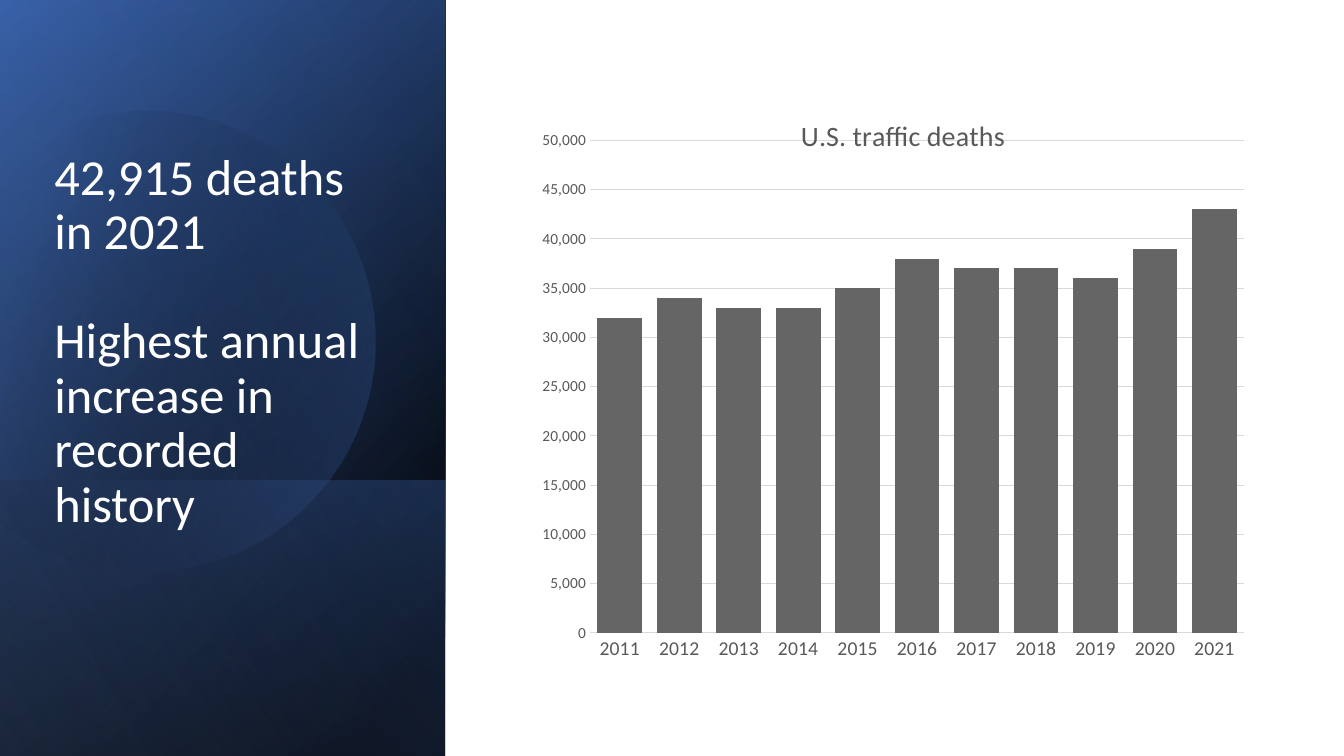
"""Build the slide on yearly U.S. traffic deaths with its column chart."""
from dataclasses import dataclass
from math import cos, radians, sin

from lxml import etree
from pptx import Presentation
from pptx.chart.data import CategoryChartData
from pptx.dml.color import RGBColor
from pptx.enum.chart import XL_CHART_TYPE as ChartType, XL_TICK_MARK as TickMark
from pptx.enum.shapes import MSO_SHAPE as Preset
from pptx.enum.text import MSO_ANCHOR as Anchor, MSO_AUTO_SIZE as AutoSize, PP_ALIGN as Align
from pptx.oxml import parse_xml
from pptx.oxml.ns import nsdecls, qn
from pptx.util import Pt

FONT = "Calibri"
STRIP_WIDTH, SLIDE_HEIGHT = 318, 540
DISC_TURN = 343.9
DISC_CENTRE = (114, 241)
DISC_START = (107.3, 79.2)
DISC_EDGES = [
    [(177.1, 80.6), (241.2, 127.4), (261.4, 198)],
    [(286.6, 285.8), (236.2, 376.6), (149, 401.8)],
    [(94.3, 417.6), (38.2, 403.9), (-2.2, 370.1)],
    [(-10.8, 362.2)],
    [(-10.8, 126)],
    [(0, 115.9)],
    [(16.6, 102.2), (36, 92.2), (57.6, 85.7)],
    [(74.2, 81.4), (90.7, 79.2), DISC_START],
]
DEATHS = {
    "2011": 32000, "2012": 34000, "2013": 33000, "2014": 33000,
    "2015": 35000, "2016": 38000, "2017": 37000, "2018": 37000,
    "2019": 36000, "2020": 39000, "2021": 43000,
}


@dataclass
class Stop:
    position: int
    color: str
    alpha: int = 100


@dataclass
class Panel:
    top: float
    height: float
    angle: int
    stops: list[Stop]


BASE_PANELS = [
    Panel(0, SLIDE_HEIGHT, 50, [Stop(8, "000000"), Stop(100, "2F5597")]),
    Panel(0, SLIDE_HEIGHT, 30, [Stop(0, "000000", 0), Stop(99, "4472C4", 46)]),
    Panel(343, 197, 130, [Stop(2, "4472C4", 29), Stop(100, "000000", 30)]),
]
DISC_STOPS = [Stop(29, "000000", 0), Stop(100, "4472C4", 43)]
SHEEN_PANEL = Panel(0, SLIDE_HEIGHT, 120, [Stop(0, "000000", 0), Stop(99, "8FAADC", 11)])


def rgb(color: str) -> RGBColor:
    return RGBColor.from_string(color)


def fill_gradient(shape, angle: int, stops: list[Stop]) -> None:
    marks = "".join(
        f'<a:gs pos="{stop.position * 1000}"><a:srgbClr val="{stop.color}">'
        f'<a:alpha val="{stop.alpha * 1000}"/></a:srgbClr></a:gs>'
        for stop in stops
    )
    shape.shadow.inherit = False
    shape.line.fill.background()
    shape.fill.background()
    properties = shape._element.spPr
    properties.replace(properties.find(qn("a:noFill")), parse_xml(
        f'<a:gradFill {nsdecls("a")} rotWithShape="1"><a:gsLst>{marks}</a:gsLst>'
        f'<a:lin ang="{angle * 60000}" scaled="0"/></a:gradFill>'
    ))


def draw_panel(slide, panel: Panel) -> None:
    offset = (STRIP_WIDTH - panel.height) / 2
    rect = slide.shapes.add_shape(
        Preset.RECTANGLE, Pt(offset), Pt(panel.top - offset),
        Pt(panel.height), Pt(STRIP_WIDTH),
    )
    rect.rotation = 90
    rect._element.spPr.xfrm.set("flipH", "1")
    fill_gradient(rect, panel.angle, panel.stops)


def turned(x: float, y: float, degrees: float) -> tuple[int, int]:
    turn = radians(degrees)
    centre_x, centre_y = DISC_CENTRE
    dx, dy = x - centre_x, y - centre_y
    return (Pt(centre_x + dx * cos(turn) - dy * sin(turn)),
            Pt(centre_y + dx * sin(turn) + dy * cos(turn)))


def draw_disc(slide) -> None:
    builder = slide.shapes.build_freeform(*turned(*DISC_START, -DISC_TURN))
    builder.add_line_segments(
        [turned(*point, -DISC_TURN) for edge in DISC_EDGES for point in edge], close=True)
    disc = builder.convert_to_shape()
    segments = iter(list(disc._element.iter(qn("a:lnTo"))))
    for edge in DISC_EDGES:
        first, *others = [next(segments) for _ in edge]
        if others:
            curve = etree.Element(qn("a:cubicBezTo"))
            first.addprevious(curve)
            for segment in (first, *others):
                curve.append(segment[0])
                segment.getparent().remove(segment)
    middle_x = (disc.left + disc.width / 2) / Pt(1)
    middle_y = (disc.top + disc.height / 2) / Pt(1)
    shown_x, shown_y = turned(middle_x, middle_y, DISC_TURN)
    disc.left, disc.top = shown_x - disc.width // 2, shown_y - disc.height // 2
    disc.rotation = DISC_TURN
    fill_gradient(disc, 30, DISC_STOPS)


def write_headline(slide) -> None:
    headline = slide.shapes.title
    slide.shapes._spTree.append(headline._element)
    headline.left, headline.top = Pt(31.6), Pt(82.6)
    headline.width, headline.height = Pt(254), Pt(301.7)
    frame = headline.text_frame
    frame.auto_size = AutoSize.NONE
    frame.word_wrap = True
    frame.vertical_anchor = Anchor.BOTTOM
    frame.text = "42,915 deaths in 2021\nHighest annual increase in recorded history"
    for paragraph in frame.paragraphs:
        paragraph.alignment = Align.LEFT
        paragraph.line_spacing = 0.9
        paragraph.font.size = Pt(36)
        paragraph.font.name = FONT
        paragraph.font.color.rgb = rgb("FFFFFF")
    frame.paragraphs[1].space_before = Pt(39)


def style_font(font, size: int) -> None:
    font.size, font.name, font.bold = Pt(size), FONT, False
    font.color.rgb = rgb("595959")


def style_line(line) -> None:
    line.width = Pt(0.75)
    line.color.rgb = rgb("D9D9D9")


def place(parent, **settings: object) -> None:
    layout = parent.find(qn("c:layout"))
    if layout is None:
        layout = etree.Element(qn("c:layout"))
        parent.insert(0 if parent.find(qn("c:tx")) is None else 1, layout)
    manual = etree.SubElement(layout, qn("c:manualLayout"))
    for name, value in settings.items():
        etree.SubElement(manual, qn(f"c:{name}")).set("val", str(value))


def draw_chart(slide) -> None:
    data = CategoryChartData()
    data.categories = list(DEATHS)
    data.add_series("Series 1", list(DEATHS.values()))
    chart = slide.shapes.add_chart(
        ChartType.COLUMN_CLUSTERED, Pt(379.5), Pt(66), Pt(525), Pt(429), data,
    ).chart
    chart.has_legend = False
    chart.font.size, chart.font.name = Pt(10), FONT
    heading = chart.chart_title
    heading.text_frame.text = "U.S. traffic deaths"
    style_font(heading.text_frame.paragraphs[0].font, 20)
    heading.include_in_layout = True
    place(heading._element, xMode="edge", yMode="edge", x=0.36, y=0.03)
    place(chart._chartSpace.chart.plotArea, layoutTarget="inner", xMode="edge",
          yMode="edge", x=0.08, y=0.08, w=0.89, h=0.82)

    years, counts = chart.category_axis, chart.value_axis
    for axis, size in ((years, 14), (counts, 11)):
        axis.major_tick_mark = axis.minor_tick_mark = TickMark.NONE
        style_font(axis.tick_labels.font, size)
    style_line(years.format.line)
    counts.format.line.fill.background()
    style_line(counts.major_gridlines.format.line)
    counts.minimum_scale, counts.maximum_scale, counts.major_unit = 0, 50000, 5000
    counts.tick_labels.number_format = "#,##0"
    counts.tick_labels.number_format_is_linked = False

    columns = chart.plots[0]
    columns.gap_width, columns.overlap, columns.vary_by_categories = 33, -30, False
    bars = columns.series[0].format.fill
    bars.solid()
    bars.fore_color.rgb = rgb("656565")


def main() -> None:
    deck = Presentation()
    deck.slide_width, deck.slide_height = Pt(960), Pt(SLIDE_HEIGHT)
    slide = deck.slides.add_slide(deck.slide_layouts[5])
    for panel in BASE_PANELS:
        draw_panel(slide, panel)
    draw_disc(slide)
    draw_panel(slide, SHEEN_PANEL)
    write_headline(slide)
    draw_chart(slide)
    deck.save("out.pptx")


if __name__ == "__main__":
    main()
